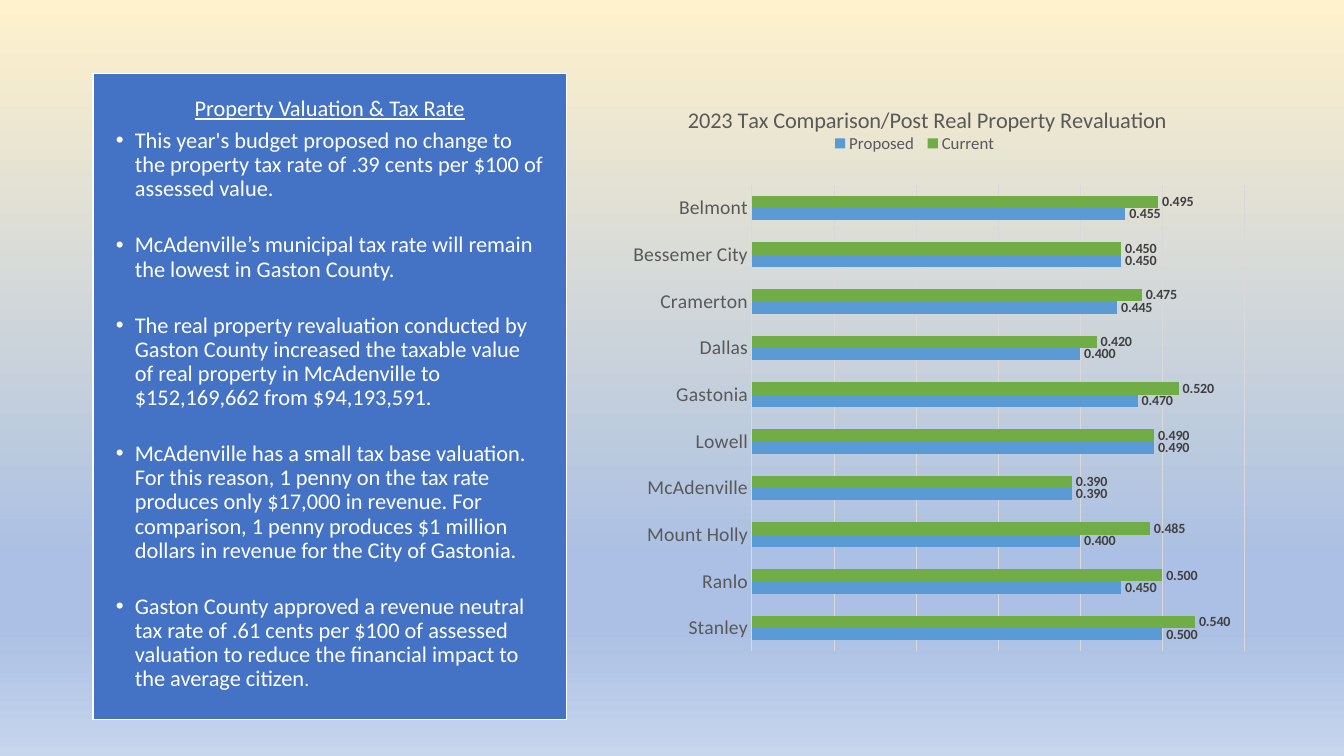
from lxml import etree
from pptx import Presentation
from pptx import util as u
from pptx.chart.data import CategoryChartData
from pptx.dml.color import RGBColor
from pptx.enum import chart as ch, shapes, text
from pptx.oxml.ns import qn

FONT = "Calibri"
BACKGROUND = [(0, "FFF2CC"), (74, "ABC0E4"), (83, "ABC0E4"), (100, "C7D5ED")]
HEADING = "Property Valuation & Tax Rate"
BULLETS = [
    ["This year's budget proposed no change to the property tax rate of .39 cents "
     "per $100 of assessed value."],
    ["McAdenville’s municipal tax rate will remain the lowest in Gaston County."],
    ["The real property revaluation conducted by Gaston County increased the taxable "
     "value of real property in McAdenville to $152,169,662 from $94,193,591."],
    ["McAdenville has a small tax base valuation. For this reason, 1 penny on the tax "
     "rate produces only $17,000 in revenue. For comparison, 1 penny produces "
     "$1 million dollars in revenue for the City of Gastonia."],
    ["Gaston County approved a revenue neutral tax rate of .61 cents per $100 of "
     "assessed valuation to reduce the financial impact to the average citizen", "."],
]
CHART_TITLE = "2023 Tax Comparison/Post Real Property Revaluation"
RATES = {
    "Belmont": (0.495, 0.455),
    "Bessemer City": (0.45, 0.45),
    "Cramerton": (0.475, 0.445),
    "Dallas": (0.42, 0.4),
    "Gastonia": (0.52, 0.47),
    "Lowell": (0.49, 0.49),
    "McAdenville": (0.39, 0.39),
    "Mount Holly": (0.485, 0.4),
    "Ranlo": (0.5, 0.45),
    "Stanley": (0.54, 0.5),
}
SERIES = [("Current", "70AD47"), ("Proposed", "5B9BD5")]


def color(value):
    return RGBColor.from_string(value)


def style(font, size, shade, bold=False):
    font.name = FONT
    font.size = u.Pt(size)
    font.bold = bold
    font.color.rgb = color(shade)


def place(parent, previous, inner=False, **fractions):
    for old in parent.findall(qn("c:layout")):
        parent.remove(old)
    layout = etree.Element(qn("c:layout"))
    manual = etree.SubElement(layout, qn("c:manualLayout"))
    entries = {"layoutTarget": "inner"} if inner else {}
    entries.update(xMode="edge", yMode="edge", **fractions)
    for name, value in entries.items():
        etree.SubElement(manual, qn("c:" + name)).set("val", str(value))
    if previous is None:
        parent.insert(0, layout)
    else:
        parent.find(qn(previous)).addnext(layout)


def add_background(slide):
    fill = slide.background.fill
    fill.gradient()
    fill.gradient_angle = 270
    stops = slide.element.find(".//" + qn("a:gsLst"))
    for stop in list(stops):
        stops.remove(stop)
    for position, shade in BACKGROUND:
        stop = etree.SubElement(stops, qn("a:gs"), pos=str(position * 1000))
        etree.SubElement(stop, qn("a:srgbClr"), val=shade)


def add_panel(slide):
    panel = slide.shapes.add_shape(
        shapes.MSO_SHAPE.RECTANGLE, u.Cm(2.34), u.Cm(1.85), u.Cm(11.94), u.Cm(16.28))
    panel.shadow.inherit = False
    panel.fill.solid()
    panel.fill.fore_color.rgb = color("4472C4")
    panel.line.color.rgb = color("FFFFFF")
    panel.line.width = u.Pt(1)
    frame = panel.text_frame
    frame.word_wrap = True
    frame.vertical_anchor = text.MSO_ANCHOR.TOP
    frame.margin_left = frame.margin_right = u.Cm(0.58)
    frame.margin_top = frame.margin_bottom = u.Cm(0.61)

    heading = frame.paragraphs[0]
    heading.text = HEADING
    heading.alignment = text.PP_ALIGN.CENTER
    heading.line_spacing = 0.9
    heading.space_after = u.Pt(5.4)
    style(heading.runs[0].font, 16, "FFFFFF")
    heading.runs[0].font.underline = True

    for number, pieces in enumerate(BULLETS):
        paragraph = frame.add_paragraph()
        properties = paragraph._p.get_or_add_pPr()
        properties.set("marL", str(u.Cm(0.48)))
        properties.set("indent", str(u.Cm(-0.48)))
        etree.SubElement(properties, qn("a:buFont"), typeface="Arial")
        etree.SubElement(properties, qn("a:buChar"), char="•")
        paragraph.alignment = text.PP_ALIGN.LEFT
        paragraph.line_spacing = 0.9
        if number:
            paragraph.space_before = u.Pt(22.7)
        for piece, size in zip(pieces, (16, 14)):
            run = paragraph.add_run()
            run.text = piece
            style(run.font, size, "FFFFFF")


def add_rate_chart(slide):
    data = CategoryChartData(number_format="0.000")
    data.categories = list(RATES)
    for (name, _), values in zip(SERIES, zip(*RATES.values())):
        data.add_series(name, values)
    chart = slide.shapes.add_chart(
        ch.XL_CHART_TYPE.BAR_CLUSTERED,
        u.Cm(14.3), u.Cm(1.85), u.Cm(17.68), u.Cm(15.32), data).chart
    style(chart.font, 10, "000000")

    title = chart.chart_title
    title.text_frame.text = CHART_TITLE
    style(title.text_frame.paragraphs[0].runs[0].font, 16, "595959")
    place(title._element, "c:tx", x=0.166, y=0.045)

    chart.has_legend = True
    legend = chart.legend
    legend.position = ch.XL_LEGEND_POSITION.BOTTOM
    legend.include_in_layout = False
    style(legend.font, 12, "595959")
    place(legend._element, "c:legendPos", x=0.37, y=0.09, w=0.25, h=0.05)

    towns = chart.category_axis
    towns.reverse_order = True
    towns.major_tick_mark = ch.XL_TICK_MARK.NONE
    towns.format.line.color.rgb = color("D9D9D9")
    towns.format.line.width = u.Pt(0.75)
    style(towns.tick_labels.font, 14, "595959")

    rates = chart.value_axis
    rates.visible = False
    rates.minimum_scale, rates.maximum_scale, rates.major_unit = 0, 0.6, 0.1
    rates.has_major_gridlines = True
    rates.major_gridlines.format.line.color.rgb = color("D9D9D9")
    rates.major_gridlines.format.line.width = u.Pt(0.75)

    plot = chart.plots[0]
    plot.gap_width = 182
    plot.overlap = 0
    plot.vary_by_categories = False
    for series, (_, shade) in zip(plot.series, SERIES):
        series.format.fill.solid()
        series.format.fill.fore_color.rgb = color(shade)
        labels = series.data_labels
        labels.show_value = True
        labels.position = ch.XL_LABEL_POSITION.OUTSIDE_END
        labels.number_format = "0.000"
        labels.number_format_is_linked = False
        style(labels.font, 10, "404040", bold=True)
    area = chart._chartSpace.find(".//" + qn("c:plotArea"))
    place(area, None, inner=True, x=0.263, y=0.183, w=0.702, h=0.768)


def main():
    presentation = Presentation()
    presentation.slide_width = u.Cm(33.87)
    presentation.slide_height = u.Cm(19.05)
    slide = presentation.slides.add_slide(presentation.slide_layouts[6])
    add_background(slide)
    add_rate_chart(slide)
    add_panel(slide)
    presentation.save("out.pptx")


if __name__ == "__main__":
    main()
